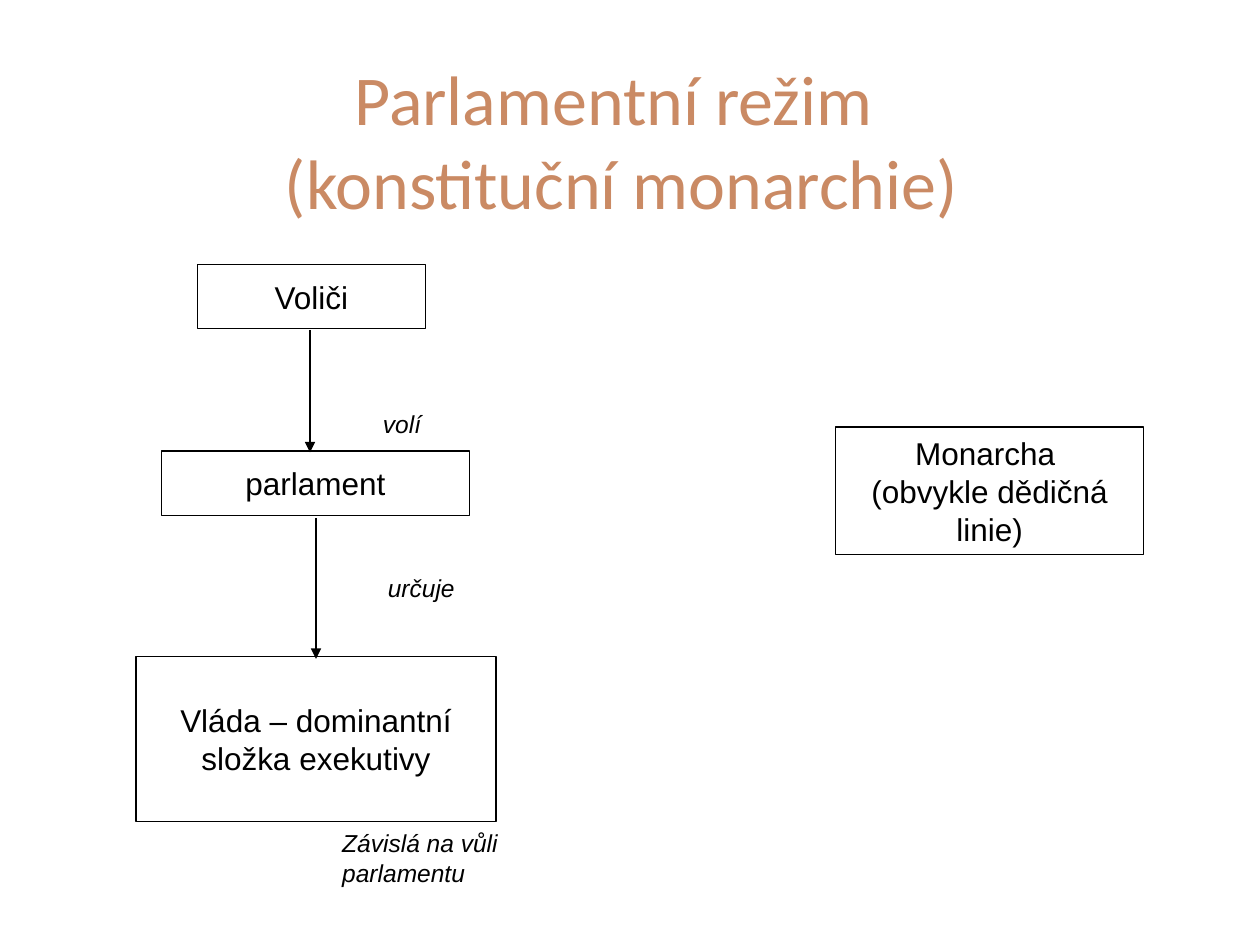
from dataclasses import dataclass

from lxml import etree
from pptx import Presentation
from pptx.dml.color import RGBColor
from pptx.enum.shapes import MSO_CONNECTOR as Link, MSO_SHAPE as Shape
from pptx.enum.text import MSO_ANCHOR as Anchor, PP_ALIGN as Align
from pptx.oxml.ns import qn
from pptx.slide import Slide
from pptx.util import Cm, Pt


def color(hex_code):
    return RGBColor.from_string(hex_code)


def write(frame, text, font="Arial", size=18, ink="000000", italic=False,
          align=Align.CENTER, anchor=Anchor.MIDDLE):
    """Fill a frame; a newline starts a paragraph, a vertical tab breaks a line."""
    frame.word_wrap = True
    frame.vertical_anchor = anchor
    frame.text = text
    for paragraph in frame.paragraphs:
        paragraph.alignment = align
        for run in paragraph.runs:
            run.font.name = font
            run.font.size = Pt(size)
            run.font.italic = italic
            run.font.color.rgb = color(ink)


@dataclass
class Diagram:
    slide: Slide
    ink: str = "000000"
    accent: str = "CA8A64"
    line_width: float = 0.75

    def title(self, text, left, top, width, height):
        heading = self.slide.shapes.add_textbox(Cm(left), Cm(top), Cm(width), Cm(height))
        write(heading.text_frame, text, font="Calibri", size=40, ink=self.accent)

    def box(self, text, left, top, width, height):
        body = self.slide.shapes.add_shape(
            Shape.RECTANGLE, Cm(left), Cm(top), Cm(width), Cm(height))
        body.shadow.inherit = False
        body.fill.background()
        body.line.color.rgb = color(self.ink)
        body.line.width = Pt(self.line_width)
        write(body.text_frame, text, ink=self.ink)

    def note(self, text, left, top, width, height):
        remark = self.slide.shapes.add_textbox(Cm(left), Cm(top), Cm(width), Cm(height))
        write(remark.text_frame, text, size=14, ink=self.ink, italic=True,
              align=Align.LEFT, anchor=Anchor.BOTTOM)

    def arrow_down(self, x, start, end):
        arrow = self.slide.shapes.add_connector(
            Link.STRAIGHT, Cm(x), Cm(start), Cm(x), Cm(end))
        arrow.line.color.rgb = color(self.ink)
        arrow.line.width = Pt(self.line_width)
        properties = arrow.line._get_or_add_ln()
        etree.SubElement(properties, qn("a:tailEnd"), type="triangle")
        etree.SubElement(properties.getparent(), qn("a:effectLst"))


def main():
    deck = Presentation()
    deck.slide_width, deck.slide_height = Cm(25.4), Cm(19.05)
    regime = Diagram(deck.slides.add_slide(deck.slide_layouts[6]))

    regime.title("Parlamentní režim \v(konstituční monarchie)", 0.79, 1.9, 23.47, 1.83)

    regime.box("Voliči", 3.98, 5.33, 4.6, 1.3)
    regime.box("parlament", 3.25, 9.09, 6.22, 1.3)
    regime.box("Vláda – dominantní složka exekutivy", 2.74, 13.23, 7.26, 3.33)
    regime.box("Monarcha \n(obvykle dědičná linie)", 16.84, 8.61, 6.22, 2.57)

    regime.arrow_down(6.25, 6.65, 9.12)
    regime.arrow_down(6.37, 10.44, 13.28)

    regime.note("volí", 7.47, 8.13, 2.03, 0.84)
    regime.note("určuje", 7.57, 11.43, 2.97, 0.84)
    regime.note("Závislá na vůli parlamentu", 6.65, 16.56, 5.33, 1.45)

    deck.save("out.pptx")


if __name__ == "__main__":
    main()
